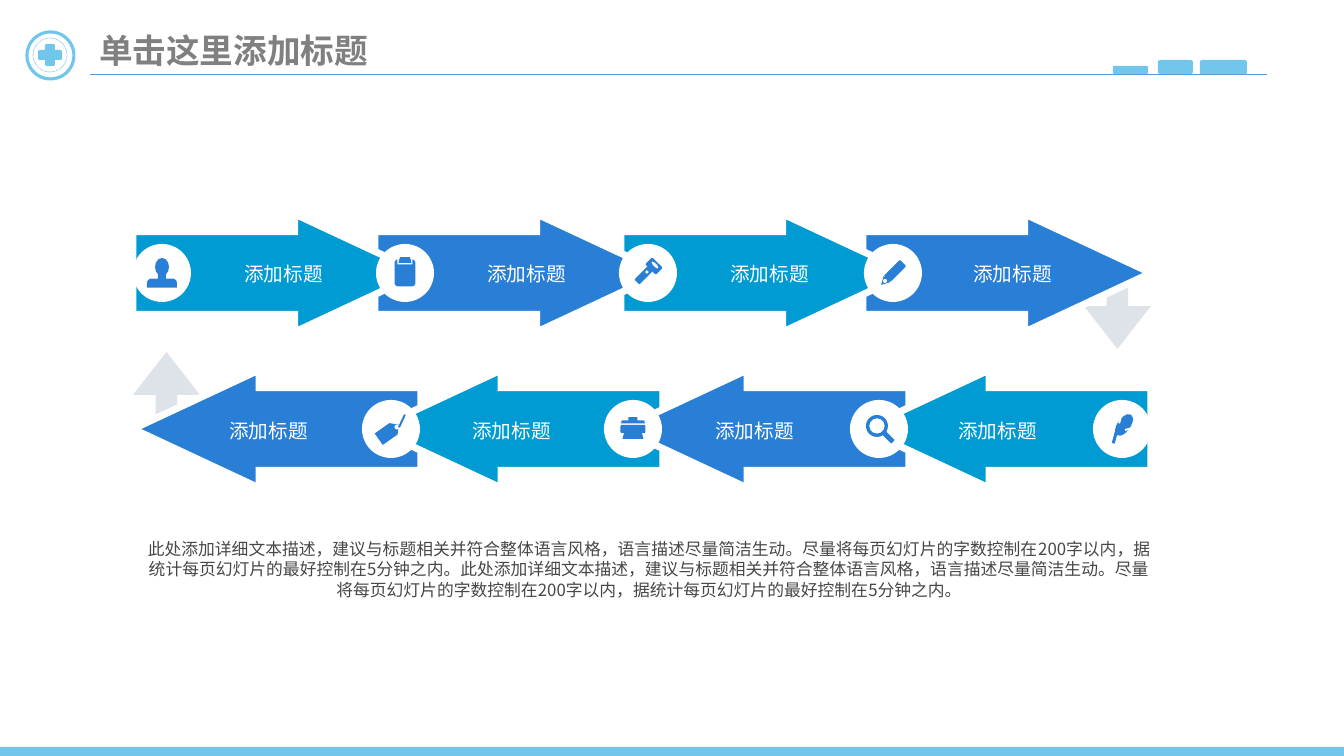
"""Build a slide with two rows of arrows forming an eight-step cycle."""
from lxml import etree
from pptx import Presentation
from pptx.dml.color import RGBColor
from pptx.enum.dml import MSO_LINE
from pptx.enum.shapes import MSO_CONNECTOR, MSO_SHAPE
from pptx.enum.text import MSO_ANCHOR, PP_ALIGN
from pptx.oxml.ns import qn
from pptx.util import Emu, Pt

PX = 914400 / 100.8
FONT = "Noto Sans CJK SC"
SKY = RGBColor(0x70, 0xC6, 0xEB)
RULE = RGBColor(0x5B, 0x9B, 0xD5)
BLUE = RGBColor(0x29, 0x7F, 0xD5)
CYAN = RGBColor(0x00, 0x9B, 0xD2)
SLATE = RGBColor(0x7F, 0x8F, 0xA9)
WHITE = RGBColor(0xFF, 0xFF, 0xFF)
GRAY = RGBColor(0x80, 0x80, 0x80)
DARK = RGBColor(0x47, 0x47, 0x47)
OVAL, RECT, ROUND = MSO_SHAPE.OVAL, MSO_SHAPE.RECTANGLE, MSO_SHAPE.ROUNDED_RECTANGLE
RIGHT, LEFT = MSO_SHAPE.RIGHT_ARROW, MSO_SHAPE.LEFT_ARROW
UP, DOWN, DONUT = MSO_SHAPE.UP_ARROW, MSO_SHAPE.DOWN_ARROW, MSO_SHAPE.DONUT
DOME, TRAPEZOID = MSO_SHAPE.ROUND_2_SAME_RECTANGLE, MSO_SHAPE.TRAPEZOID
TRIANGLE, LABEL = MSO_SHAPE.ISOSCELES_TRIANGLE, MSO_SHAPE.PENTAGON
STRAIGHT, DOTTED = MSO_CONNECTOR.STRAIGHT, MSO_LINE.ROUND_DOT
TOP, ALIGN_LEFT, CENTER = MSO_ANCHOR.TOP, PP_ALIGN.LEFT, PP_ALIGN.CENTER

prs = Presentation()
prs.slide_width, prs.slide_height = Emu(round(1344 * PX)), Emu(round(756 * PX))
s = prs.slides.add_slide(prs.slide_layouts[5])


def add_shape(kind, box, fill=None, line=None, width=0, adj=(), angle=0):
    sp = s.shapes.add_shape(kind, *[Emu(round(v * PX)) for v in box])
    sp.shadow.inherit = False
    sp.rotation = angle
    for i, value in enumerate(adj):
        sp.adjustments[i] = value
    if fill is None:
        sp.fill.background()
    else:
        sp.fill.solid()
        sp.fill.fore_color.rgb = fill
    if line is None:
        sp.line.fill.background()
    else:
        sp.line.color.rgb = line
        sp.line.width = Pt(width)
    return sp


def write(sp, box, text, size, color, bold=False, align=CENTER, inset=0, wrap=True):
    sp.left, sp.top, sp.width, sp.height = [Emu(round(v * PX)) for v in box]
    tf = sp.text_frame
    frame = {"word_wrap": wrap, "vertical_anchor": TOP,
             "margin_left": inset * 2, "margin_right": inset * 2,
             "margin_top": inset, "margin_bottom": inset}
    for name, value in frame.items():
        setattr(tf, name, value)
    p = tf.paragraphs[0]
    p.alignment = align
    p.line_spacing = Pt(round(size * 1.2, 1))
    r = p.add_run()
    r.text = text
    for name, value in {"name": FONT, "size": Pt(size), "bold": bold}.items():
        setattr(r.font, name, value)
    r.font.color.rgb = color
    etree.SubElement(r.font._element, qn("a:ea"), typeface=FONT)


write(s.shapes.title, (89, 25, 291, 50), "单击这里添加标题", 24, GRAY,
      bold=True, align=ALIGN_LEFT, inset=Emu(45720), wrap=False)

add_shape(OVAL, (27, 32, 47, 47), line=SKY, width=2.25)
add_shape(OVAL, (33, 38, 34, 34), line=SKY, width=0.5).line.dash_style = DOTTED
cross_bars = ((45, 44, 10, 22), (38, 50, 24, 10))
corner_bars = ((1113, 66, 35, 8), (1158, 60, 35, 14), (1200, 60, 47, 15))
for box in cross_bars + corner_bars:
    add_shape(ROUND, box, SKY)

rule = s.shapes.add_connector(STRAIGHT, *[Emu(round(v * PX)) for v in (90, 74, 1267, 74)])
rule.line.color.rgb = RULE
rule.line.width = Pt(0.5)
etree.SubElement(rule._element.spPr, qn("a:effectLst"))
add_shape(RECT, (0, 747, 1344, 9), SKY)

for kind, x, y in ((UP, 133, 352), (DOWN, 1084, 272)):
    turn = add_shape(kind, (x, y, 67, 77), SLATE, adj=(0.32, 0.64))
    color = turn.fill._xPr.find(qn("a:solidFill"))[0]
    etree.SubElement(color, qn("a:alpha"), val="25000")

arrow_lefts = (133, 375, 621, 863)
arrow_rows = ((RIGHT, 214, (3, 2, 1, 0), (CYAN, BLUE)),
              (LEFT, 370, (0, 1, 2, 3), (BLUE, CYAN)))
for kind, top, order, colors in arrow_rows:
    for i in order:
        arrow = add_shape(kind, (arrow_lefts[i], top, 288, 118), colors[i % 2],
                          WHITE, 5, (0.7, 1.07))
        etree.SubElement(arrow.line._get_or_add_ln(), qn("a:miter"), lim="800000")

# each icon part: kind, centre offset x and y, width, height, angle, colour
person = ((OVAL, 0, -6, 14, 18, 0, BLUE), (RECT, 0, 3, 8, 8, 0, BLUE),
          (DOME, 0, 10, 30, 9, 0, BLUE))
clipboard = ((ROUND, 0, 0, 21, 27, 0, BLUE), (RECT, 0, -11, 15, 5, 0, WHITE),
             (TRAPEZOID, 0, -13, 13, 6, 0, BLUE))
flashlight = ((ROUND, -4, 2, 20, 7, -45, BLUE), (ROUND, 6, -7, 10, 15, -45, BLUE),
              (OVAL, 7, -8, 3, 9, -45, WHITE), (OVAL, -1, -1, 3, 3, 0, WHITE))
pencil = ((ROUND, 2, -2, 23, 9, -45, BLUE), (TRIANGLE, -9, 9, 9, 8, 225, BLUE),
          (OVAL, -8, 8, 4, 4, 0, WHITE))
tag = ((LABEL, -2, 3, 25, 14, -35, BLUE), (OVAL, 6, -2, 5, 5, 0, WHITE),
       (ROUND, 11, -8, 14, 2, -65, BLUE))
printer = ((RECT, 0, -10, 9, 4, 0, BLUE), (TRAPEZOID, 0, -7, 24, 3, 0, BLUE),
           (ROUND, 0, 0, 25, 8, 0, BLUE), (TRAPEZOID, 0, 6, 21, 8, 0, BLUE))
magnifier = ((DONUT, -2, -3, 22, 22, 0, BLUE), (ROUND, 9, 8, 14, 5, 45, BLUE))
feather = ((OVAL, 2, -4, 13, 25, 35, BLUE), (ROUND, -7, 8, 3, 13, 15, BLUE),
           (RECT, 7, 0, 8, 2, -15, WHITE), (RECT, -2, -9, 2, 7, 15, WHITE))
icon_adjustments = {DONUT: (0.15,), DOME: (0.5, 0)}
icon_rows = ((273, ((162, person), (405, clipboard), (648, flashlight), (893, pencil))),
             (429, ((391, tag), (633, printer), (879, magnifier), (1122, feather))))
for cy, icons in icon_rows:
    for cx, icon in icons:
        add_shape(OVAL, (cx - 29, cy - 29, 58, 58), WHITE)
        for kind, dx, dy, w, h, angle, color in icon:
            add_shape(kind, (cx + dx - w / 2, cy + dy - h / 2, w, h), color,
                      adj=icon_adjustments.get(kind, ()), angle=angle)

for left, top in ((190, 262), (175, 419)):
    for i in range(4):
        write(s.shapes.add_textbox(0, 0, 0, 0), (left + 243 * i, top, 187, 24),
              "添加标题", 14, WHITE)

description = ("此处添加详细文本描述，建议与标题相关并符合整体语言风格，语言描述尽量简洁生动。"
               "尽量将每页幻灯片的字数控制在200字以内，据统计每页幻灯片的最好控制在5分钟之内。")
write(s.shapes.add_textbox(0, 0, 0, 0), (147, 539, 1004, 61), description * 2, 12, DARK)

prs.save("out.pptx")
